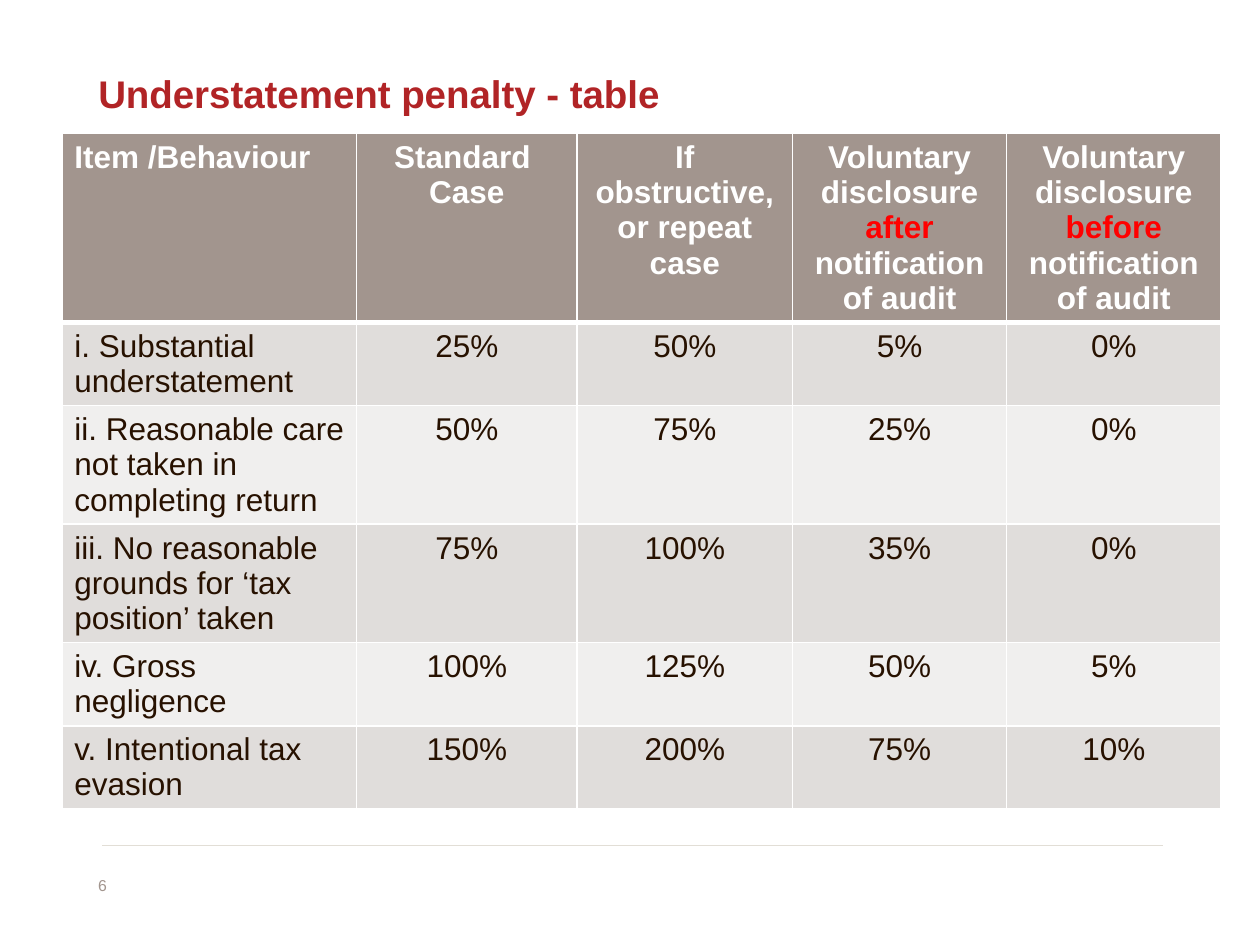
from dataclasses import dataclass

import pptx
import pptx.dml.color
import pptx.enum.shapes
import pptx.enum.text
import pptx.oxml
import pptx.oxml.ns
import pptx.util
from pptx.util import Inches

FONT = "Arial"
WHITE, RED, TITLE_RED = "FFFFFF", "FF0000", "B12426"
TAUPE, BROWN, RULE_GREY = "A2958E", "271100", "E2DED6"
BANDS = ("E0DDDB", "F0EFEE")
COLUMN_WIDTHS = (2.34, 1.75, 1.71, 1.7, 1.7)
ROW_HEIGHT = 0.62
ANCHOR = pptx.enum.text.MSO_ANCHOR
ALIGN = pptx.enum.text.PP_ALIGN


@dataclass(frozen=True)
class Penalty:
    behaviour: str
    rates: tuple[int, int, int, int]


# Each heading is a list of paragraphs; each paragraph is a list of runs.
HEADINGS = [
    [["Item /Behaviour"]],
    [["Standard "], ["Case"]],
    [["If obstructive, or repeat case"]],
    [["Voluntary disclosure ", "after", " notification of audit"]],
    [["Voluntary disclosure ", "before", " notification of audit"]],
]
HIGHLIGHTS = {"after", "before"}
PENALTIES = [
    Penalty("i. Substantial understatement", (25, 50, 5, 0)),
    Penalty("ii. Reasonable care not taken in completing return", (50, 75, 25, 0)),
    Penalty("iii. No reasonable grounds for ‘tax position’ taken", (75, 100, 35, 0)),
    Penalty("iv. Gross negligence", (100, 125, 50, 5)),
    Penalty("v. Intentional tax evasion", (150, 200, 75, 10)),
]


def rgb(color: str) -> pptx.dml.color.RGBColor:
    return pptx.dml.color.RGBColor.from_string(color)


def style_font(font, size: float, color: str, bold: bool = False) -> None:
    font.name = FONT
    font.size = pptx.util.Pt(size)
    font.bold = bold
    font.color.rgb = rgb(color)


def place(shape, left: float, top: float, width: float, height: float) -> None:
    shape.left, shape.top = Inches(left), Inches(top)
    shape.width, shape.height = Inches(width), Inches(height)


def prepare_frame(frame, anchor) -> None:
    """Remove the insets, wrap the text and anchor it."""
    frame.margin_left = frame.margin_right = frame.margin_top = frame.margin_bottom = 0
    frame.word_wrap = True
    frame.auto_size = pptx.enum.text.MSO_AUTO_SIZE.NONE
    frame.vertical_anchor = anchor


def add_title(slide, text: str) -> None:
    title = slide.shapes.title
    place(title, 0.78, 0.37, 8.45, 0.55)
    prepare_frame(title.text_frame, ANCHOR.BOTTOM)
    title.text_frame.text = text
    paragraph = title.text_frame.paragraphs[0]
    paragraph.alignment = ALIGN.LEFT
    paragraph.line_spacing = 0.8
    style_font(paragraph.font, 22, TITLE_RED, bold=True)


def add_footer(slide, page: str) -> None:
    rule = slide.shapes.add_connector(
        pptx.enum.shapes.MSO_CONNECTOR.STRAIGHT,
        Inches(0.81), Inches(6.71), Inches(9.23), Inches(6.71))
    rule.line.color.rgb = rgb(RULE_GREY)
    rule.line.width = pptx.util.Pt(0.5)
    properties = rule._element.spPr
    properties.append(pptx.oxml.parse_xml(
        f'<a:effectLst {pptx.oxml.ns.nsdecls("a")}/>'))

    number = slide.shapes.add_textbox(
        Inches(0.78), Inches(6.9), Inches(0.5), Inches(0.25))
    prepare_frame(number.text_frame, ANCHOR.MIDDLE)
    number.text_frame.text = page
    style_font(number.text_frame.paragraphs[0].font, 9, TAUPE)


def set_borders(cell, top: float, bottom: float) -> None:
    """Draw white borders, 1 pt at the sides and as given above and below."""
    properties = cell._tc.get_or_add_tcPr()
    for side, width in (("L", 1), ("R", 1), ("T", top), ("B", bottom)):
        properties.append(pptx.oxml.parse_xml(
            f'<a:ln{side} {pptx.oxml.ns.nsdecls("a")} w="{pptx.util.Pt(width)}">'
            f'<a:solidFill><a:srgbClr val="{WHITE}"/></a:solidFill></a:ln{side}>'))


def fill_cell(cell, paragraphs: list[list[str]], row: int, column: int) -> None:
    is_header = row == 0
    set_borders(cell, top=3 if row == 1 else 1, bottom=3 if is_header else 1)
    cell.fill.solid()
    cell.fill.fore_color.rgb = rgb(TAUPE if is_header else BANDS[(row - 1) % 2])
    for index, runs in enumerate(paragraphs):
        frame = cell.text_frame
        paragraph = frame.add_paragraph() if index else frame.paragraphs[0]
        paragraph.alignment = ALIGN.CENTER if column else ALIGN.LEFT
        style_font(paragraph.font, 18, WHITE if is_header else BROWN, is_header)
        for text in runs:
            run = paragraph.add_run()
            run.text = text
            if text in HIGHLIGHTS:
                run.font.color.rgb = rgb(RED)


def add_penalty_table(slide) -> None:
    rows = [HEADINGS] + [
        [[[penalty.behaviour]]] + [[[f"{rate}%"]] for rate in penalty.rates]
        for penalty in PENALTIES
    ]
    table = slide.shapes.add_table(
        len(rows), len(COLUMN_WIDTHS), Inches(0.49), Inches(1.06),
        Inches(sum(COLUMN_WIDTHS)), Inches(ROW_HEIGHT * len(rows))).table
    for column, width in zip(table.columns, COLUMN_WIDTHS):
        column.width = Inches(width)
    for row, contents in enumerate(rows):
        for column, paragraphs in enumerate(contents):
            fill_cell(table.cell(row, column), paragraphs, row, column)


def main() -> None:
    presentation = pptx.Presentation()
    presentation.slide_width = Inches(10)
    presentation.slide_height = Inches(7.5)
    slide = presentation.slides.add_slide(presentation.slide_layouts[5])
    add_title(slide, "Understatement penalty - table")
    add_footer(slide, "6")
    add_penalty_table(slide)
    presentation.save("out.pptx")


if __name__ == "__main__":
    main()
